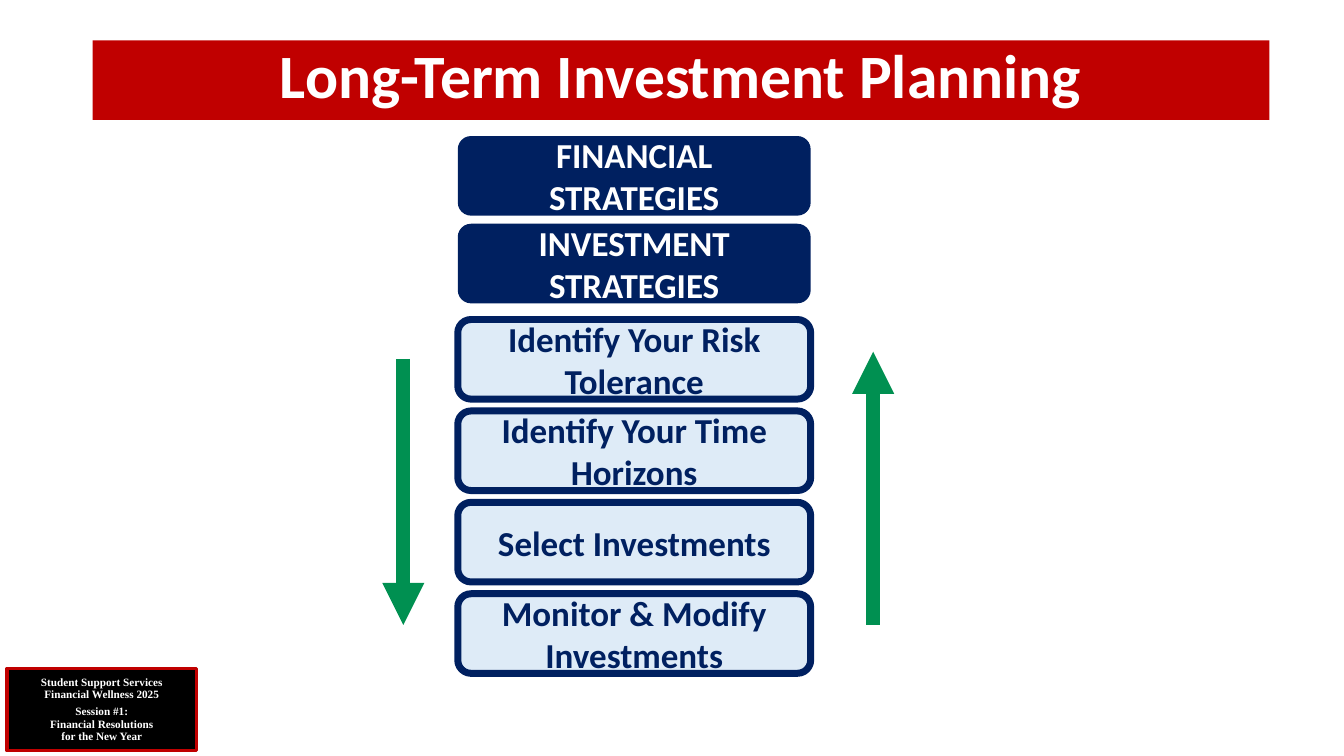
"""Build the long-term investment planning slide."""
from dataclasses import dataclass
from typing import Optional

from lxml import etree
from pptx import Presentation
from pptx import util as u
from pptx.dml.color import RGBColor
from pptx.enum import shapes, text
from pptx.oxml import ns

WIDTH, HEIGHT = u.Inches(13.33), u.Inches(7.5)
RED, NAVY, PALE, GREEN = "C00000", "002060", "DEEBF7", "009051"
WHITE, BLACK = "FFFFFF", "000000"
BOX_LEFT, BOX_WIDTH, BOX_HEIGHT = 34.06, 26.26, 10.53


@dataclass
class Stack:
    """A column of boxes; top and step are percentages of the slide height."""
    labels: list[str]
    top: float
    step: float
    fill: str
    color: str
    outline: Optional[str] = None


@dataclass
class Arrow:
    """A vertical arrow; positions are percentages of the slide size."""
    x: float
    start: float
    end: float


STACKS = [
    Stack(["FINANCIAL STRATEGIES", "INVESTMENT STRATEGIES"], 18, 11.6, NAVY, WHITE),
    Stack(["Identify Your Risk Tolerance", "Identify Your Time Horizons",
           "Select Investments", "Monitor & Modify Investments"],
          42.27, 12.09, PALE, NAVY, NAVY),
]
ARROWS = [Arrow(30.01, 47.47, 82.67), Arrow(64.97, 82.67, 46.53)]
SESSION_BLOCKS = [
    ["Student Support Services", "Financial Wellness 2025"],
    ["Session #1:", "Financial Resolutions", "for the New Year"],
]


def rgb(value: str) -> RGBColor:
    """Turn a hex string into a colour."""
    return RGBColor.from_string(value)


def across(percent: float) -> int:
    """Convert a percentage of the slide width to a length."""
    return round(WIDTH * percent / 100)


def down(percent: float) -> int:
    """Convert a percentage of the slide height to a length."""
    return round(HEIGHT * percent / 100)


def write(paragraph, words: str, *, size: float, color: str, font: str = "Calibri",
          spacing: float = 1.0, before: float = 0) -> None:
    """Write centred bold text into a paragraph."""
    paragraph.alignment = text.PP_ALIGN.CENTER
    paragraph.line_spacing = spacing
    paragraph.space_before = u.Pt(before)
    run = paragraph.add_run()
    run.text = words
    run.font.name, run.font.size, run.font.bold = font, u.Pt(size), True
    run.font.color.rgb = rgb(color)


def add_box(slide, kind, left: float, top: float, width: float, height: float, *,
            fill: str, outline: Optional[str] = None, weight: float = 1):
    """Add a filled box with an optional outline."""
    shape = slide.shapes.add_shape(kind, across(left), down(top), across(width), down(height))
    shape.shadow.inherit = False
    shape.fill.solid()
    shape.fill.fore_color.rgb = rgb(fill)
    if outline:
        shape.line.color.rgb = rgb(outline)
        shape.line.width = u.Pt(weight)
    else:
        shape.line.fill.background()
    shape.text_frame.word_wrap = True
    shape.text_frame.vertical_anchor = text.MSO_ANCHOR.MIDDLE
    return shape


def add_title(slide) -> None:
    """Place and format the title banner."""
    title = slide.shapes.title
    title.left, title.top = across(6.9), down(5.33)
    title.width, title.height = across(87.55), down(10.53)
    title.fill.solid()
    title.fill.fore_color.rgb = rgb(RED)
    title.text_frame.auto_size = text.MSO_AUTO_SIZE.NONE
    title.text_frame.vertical_anchor = text.MSO_ANCHOR.TOP
    write(title.text_frame.paragraphs[0], "Long-Term Investment Planning",
          size=44, color=WHITE, spacing=0.9)


def add_session_label(slide) -> None:
    """Add the session label in the bottom left corner."""
    shape = add_box(slide, shapes.MSO_SHAPE.RECTANGLE, 0.53, 88.4, 14.1, 10.93,
                    fill=BLACK, outline=RED, weight=2.25)
    frame = shape.text_frame
    for block_index, block in enumerate(SESSION_BLOCKS):
        for line_index, line in enumerate(block):
            first = block_index == line_index == 0
            paragraph = frame.paragraphs[0] if first else frame.add_paragraph()
            write(paragraph, line, size=8, color=WHITE, font="Times New Roman",
                  spacing=0.9, before=4 if block_index and not line_index else 0)


def add_stack(slide, stack: Stack) -> None:
    """Add the boxes of one stack."""
    for index, label in enumerate(stack.labels):
        shape = add_box(slide, shapes.MSO_SHAPE.ROUNDED_RECTANGLE, BOX_LEFT,
                        stack.top + index * stack.step, BOX_WIDTH, BOX_HEIGHT,
                        fill=stack.fill, outline=stack.outline, weight=5)
        write(shape.text_frame.paragraphs[0], label, size=25, color=stack.color)


def add_arrow(slide, arrow: Arrow) -> None:
    """Add a thick arrow pointing at its end."""
    x = across(arrow.x)
    connector = slide.shapes.add_connector(
        shapes.MSO_CONNECTOR.STRAIGHT, x, down(arrow.start), x, down(arrow.end))
    connector.line.color.rgb = rgb(GREEN)
    connector.line.width = u.Pt(10)
    properties = connector._element.spPr
    etree.SubElement(properties.find(ns.qn("a:ln")), ns.qn("a:tailEnd"), type="triangle")
    etree.SubElement(properties, ns.qn("a:effectLst"))


def main() -> None:
    """Build and save the presentation."""
    presentation = Presentation()
    presentation.slide_width, presentation.slide_height = WIDTH, HEIGHT
    slide = presentation.slides.add_slide(presentation.slide_layouts.get_by_name("Title Only"))
    add_session_label(slide)
    add_title(slide)
    for stack in STACKS:
        add_stack(slide, stack)
    for arrow in ARROWS:
        add_arrow(slide, arrow)
    presentation.save("out.pptx")


if __name__ == "__main__":
    main()
